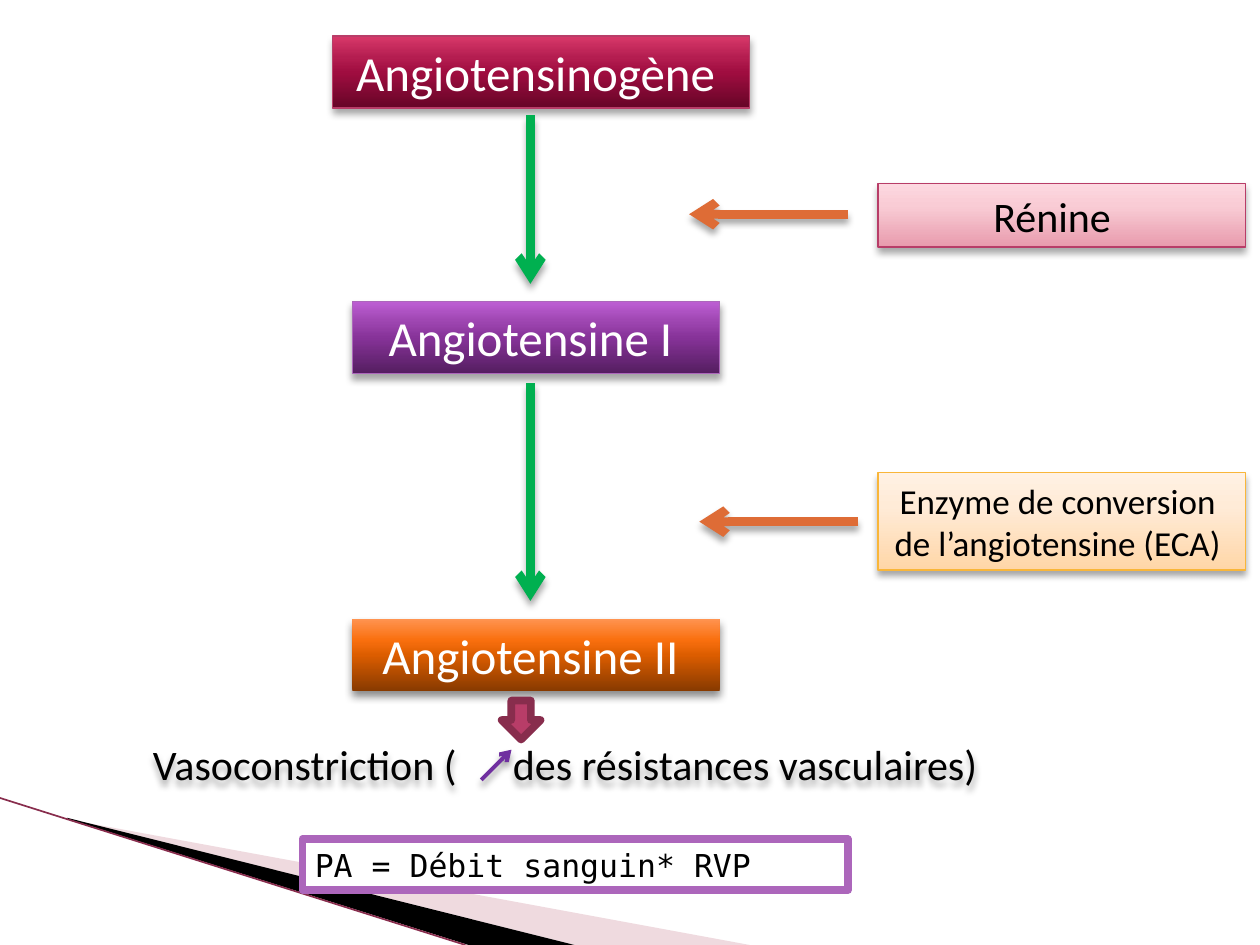
from dataclasses import dataclass
from typing import Optional

from lxml.etree import SubElement
from pptx import Presentation
from pptx.dml.color import RGBColor
from pptx.enum.shapes import MSO_CONNECTOR, MSO_SHAPE
from pptx.enum.text import MSO_AUTO_SIZE, PP_ALIGN
from pptx.oxml.ns import qn
from pptx.util import Pt

BLACK = RGBColor(0x00, 0x00, 0x00)
WHITE = RGBColor(0xFF, 0xFF, 0xFF)
PINK = RGBColor(0xD8, 0xA3, 0xAF)
EDGE = RGBColor(0xD3, 0x9A, 0xA8)
ROSE = RGBColor(0xB8, 0x3D, 0x68)
WINE = RGBColor(0x88, 0x2D, 0x4D)
LILAC = RGBColor(0xAC, 0x66, 0xBB)
GOLD = RGBColor(0xF9, 0xB6, 0x39)
GREEN = RGBColor(0x00, 0xB0, 0x50)
RUST = RGBColor(0xDE, 0x6C, 0x36)
VIOLET = RGBColor(0x70, 0x30, 0xA0)

RED_RAMP = {0: RGBColor(0x66, 0x05, 0x27), 50: RGBColor(0xA0, 0x0D, 0x40),
            70: RGBColor(0xB4, 0x1D, 0x50), 100: RGBColor(0xD8, 0x39, 0x6A)}
PLUM_RAMP = {0: RGBColor(0x55, 0x1E, 0x61), 50: RGBColor(0x87, 0x33, 0x99),
             70: RGBColor(0x9C, 0x44, 0xAF), 100: RGBColor(0xBE, 0x5F, 0xD4)}
FIRE_RAMP = {0: RGBColor(0x88, 0x3A, 0x00), 50: RGBColor(0xDC, 0x5D, 0x00),
             70: RGBColor(0xF9, 0x6F, 0x0E), 100: RGBColor(0xFF, 0x94, 0x51)}
BLUSH_RAMP = {0: RGBColor(0xE8, 0x9B, 0xAD), 65: RGBColor(0xF9, 0xCC, 0xD5),
              100: RGBColor(0xFD, 0xD8, 0xE0)}
PEACH_RAMP = {0: RGBColor(0xFF, 0xD6, 0xA7), 65: RGBColor(0xFF, 0xEB, 0xD7),
              100: RGBColor(0xFF, 0xF1, 0xE3)}


@dataclass
class Box:
    text: str
    left: float
    top: float
    width: float
    height: float
    ramp: dict
    line: Optional[RGBColor]
    size: float
    ink: RGBColor
    pad: float


@dataclass
class Arrow:
    start: tuple
    end: tuple
    ink: RGBColor
    width: float = 5


BOXES = [
    Box("Angiotensinogène", 190.1, 20.6, 238.3, 41.2, RED_RAMP, ROSE, 28, WHITE, 6.3),
    Box("Angiotensine I", 201.4, 172.1, 209.8, 41.2, PLUM_RAMP, LILAC, 28, WHITE, 6.3),
    Box("Angiotensine II", 201.4, 353.6, 209.8, 41.2, FIRE_RAMP, None, 28, WHITE, 6.3),
    Box("Rénine", 501.8, 104.8, 209.8, 36.4, BLUSH_RAMP, ROSE, 24, BLACK, 10.8),
    Box("Enzyme de conversion de l’angiotensine (ECA)", 501.8, 270.1, 209.8, 55.7,
        PEACH_RAMP, GOLD, 20, BLACK, 4.5),
]
ARROWS = [
    Arrow((303.1, 66), (303.1, 162.2), GREEN),
    Arrow((484.6, 122.4), (393.8, 122.4), RUST),
    Arrow((303.1, 218.9), (303.1, 343.4), GREEN),
    Arrow((275, 445.7), (292.3, 428.4), VIOLET, 2.25),
    Arrow((490.3, 298.1), (399.6, 298.1), RUST),
]


def add_node(base, tag: str, **values):
    return SubElement(base, qn(tag), {key: str(val) for key, val in values.items()})


def format_all(item, values: dict) -> None:
    for name, val in values.items():
        setattr(item, name, val)


def set_line(shape, ink: RGBColor, width: float) -> None:
    shape.line.color.rgb = ink
    shape.line.width = Pt(width)


def cast(shape, blur: float = 4) -> None:
    glow = add_node(shape._element.spPr, "a:effectLst")
    shade = add_node(glow, "a:outerShdw", blurRad=Pt(blur), dist=Pt(3),
                     dir=5400000, rotWithShape=0)
    tint = add_node(shade, "a:srgbClr", val=BLACK)
    add_node(tint, "a:alpha", val=35000 if blur == 4 else 45000)


def set_ramp(shape, ramp: dict) -> None:
    shape.fill.background()
    blank = shape._element.spPr.find(qn("a:noFill"))
    grad = add_node(shape._element.spPr, "a:gradFill", rotWithShape=1)
    stops = add_node(grad, "a:gsLst")
    for place, ink in ramp.items():
        add_node(add_node(stops, "a:gs", pos=place * 1000), "a:srgbClr", val=ink)
    add_node(grad, "a:lin", ang=16200000, scaled=0)
    blank.getparent().replace(blank, grad)


def set_text(shape, text: str, size: float, ink: RGBColor, align=PP_ALIGN.CENTER,
             face: str = "Calibri", left: float = 7.2, right: float = 7.2,
             tab: float = 0) -> None:
    frame = shape.text_frame
    format_all(frame, {"word_wrap": True, "auto_size": MSO_AUTO_SIZE.SHAPE_TO_FIT_TEXT,
                       "margin_left": Pt(left), "margin_right": Pt(right)})
    para = frame.paragraphs[0]
    para.alignment = align
    if tab:
        tabs = add_node(para._p.get_or_add_pPr(), "a:tabLst")
        add_node(tabs, "a:tab", pos=Pt(tab), algn="l")
    run = para.add_run()
    run.text = text
    format_all(run.font, {"name": face, "size": Pt(size)})
    run.font.color.rgb = ink


def draw_box(slide, box: Box) -> None:
    shape = slide.shapes.add_shape(MSO_SHAPE.RECTANGLE, Pt(box.left), Pt(box.top),
                                   Pt(box.width), Pt(box.height))
    set_ramp(shape, box.ramp)
    if box.line:
        set_line(shape, box.line, 0.75)
    else:
        shape.line.fill.background()
    cast(shape, 4 if box.line else 5)
    set_text(shape, box.text, box.size, box.ink, right=7.2 + box.pad)


def draw_line(slide, start: tuple, end: tuple, ink: RGBColor, width: float):
    line = slide.shapes.add_connector(MSO_CONNECTOR.STRAIGHT, Pt(start[0]), Pt(start[1]),
                                      Pt(end[0]), Pt(end[1]))
    set_line(line, ink, width)
    return line


def draw_arrow(slide, arrow: Arrow) -> None:
    line = draw_line(slide, arrow.start, arrow.end, arrow.ink, arrow.width)
    add_node(line.line._get_or_add_ln(), "a:tailEnd", type="arrow")
    cast(line)


def draw_wedge(slide, points: list, ink: RGBColor, alpha: int = 100) -> None:
    spots = [(Pt(x), Pt(y)) for x, y in points]
    form = slide.shapes.build_freeform(*spots[0])
    form.add_line_segments(spots[1:], close=True)
    shape = form.convert_to_shape()
    shape.shadow.inherit = False
    shape.fill.solid()
    shape.fill.fore_color.rgb = ink
    shape.line.fill.background()
    if alpha < 100:
        tint = shape._element.spPr.find(qn("a:solidFill"))[0]
        add_node(tint, "a:alpha", val=alpha * 1000)


def draw_plain(slide, kind, place: tuple, fill: RGBColor, ink: RGBColor):
    shape = slide.shapes.add_shape(kind, *map(Pt, place))
    shape.shadow.inherit = False
    shape.fill.solid()
    shape.fill.fore_color.rgb = fill
    set_line(shape, ink, 4.33)
    add_node(shape.line._get_or_add_ln(), "a:round")
    return shape


def main() -> None:
    deck = Presentation()
    format_all(deck, {"slide_width": Pt(720), "slide_height": Pt(540)})
    slide = deck.slides.add_slide(deck.slide_layouts[6])
    draw_wedge(slide, [(39.6, 468.4), (428.4, 540), (328.3, 540), (39.6, 468)], PINK, 40)
    draw_wedge(slide, [(38.2, 467.3), (328.3, 540), (267.8, 540), (38.9, 468)], BLACK)
    edge = draw_line(slide, (0, 456), (266, 540), WINE, 0.95)
    add_node(edge._element.spPr, "a:effectLst")
    for box in BOXES:
        draw_box(slide, box)
    label = slide.shapes.add_textbox(Pt(76.3), Pt(418.3), Pt(493.2), Pt(36.3))
    set_text(label, "Vasoconstriction (\tdes résistances vasculaires)", 24, BLACK,
             PP_ALIGN.LEFT, left=11.1, right=0, tab=205.7)
    cast(label)
    rule = draw_plain(slide, MSO_SHAPE.RECTANGLE, (172.8, 479.5, 311.8, 29.1), WHITE, LILAC)
    set_text(rule, "PA = Débit sanguin* RVP", 18, BLACK, PP_ALIGN.LEFT, "DejaVu Sans Mono")
    for arrow in ARROWS:
        draw_arrow(slide, arrow)
    draw_plain(slide, MSO_SHAPE.DOWN_ARROW, (286.6, 400.3, 22.3, 22.3), ROSE, WINE)
    deck.save("out.pptx")


if __name__ == "__main__":
    main()
